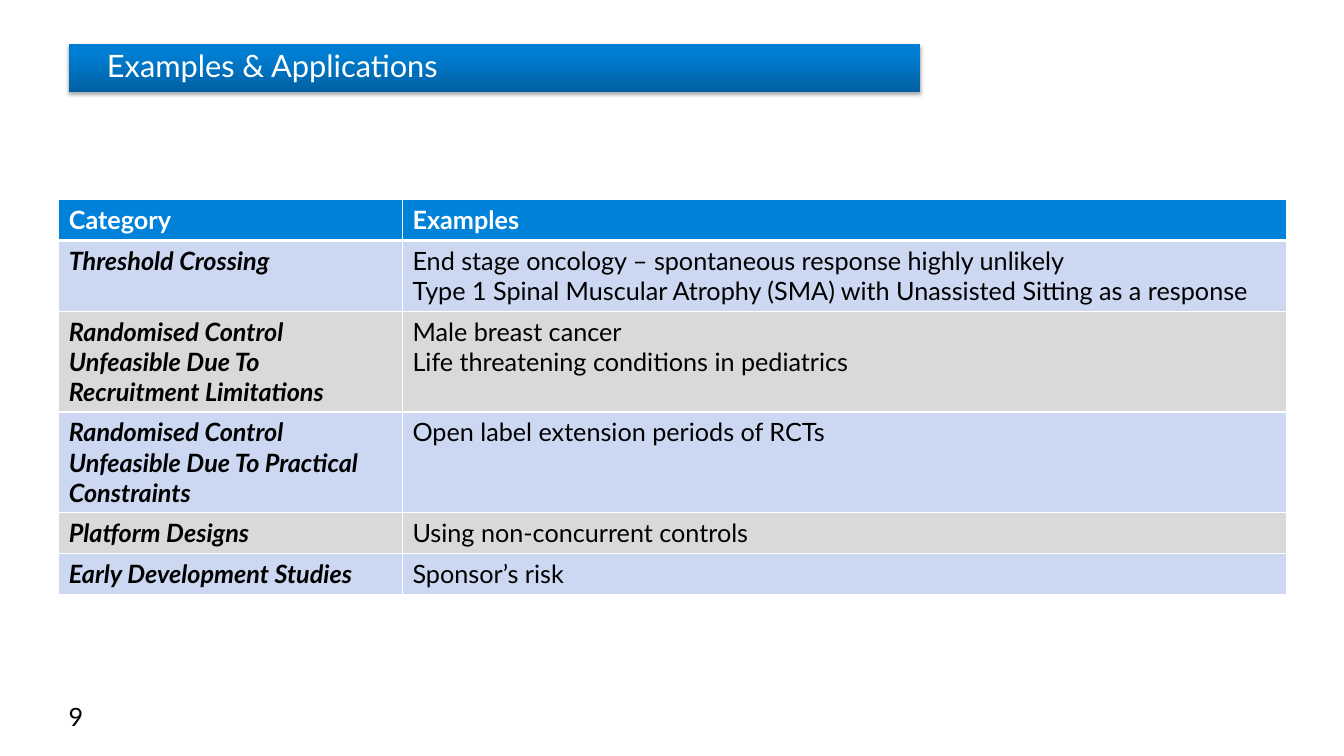
import pptx
import pptx.util
import pptx.dml.color
import pptx.enum.shapes
import pptx.enum.text
import pptx.oxml
import pptx.oxml.ns

Pt = pptx.util.Pt
NAMESPACE = pptx.oxml.ns.nsdecls("a")
LINE_HEIGHT, CELL_PADDING, MIN_ROW = 21.6, 7.2, 29.2
BANDS = ["CCD8F1", "D9D9D9"]
GRADIENT = [(0, "0061A3"), (80, "007ED3"), (100, "007FD4")]
HEADER = ("Category", ["Examples"], 1)
ROWS = [
    ("Threshold Crossing",
     ["End stage oncology – spontaneous response highly unlikely",
      "Type 1 Spinal Muscular Atrophy (SMA) with Unassisted Sitting as a response"], 2),
    ("Randomised Control Unfeasible Due To Recruitment Limitations",
     ["Male breast cancer", "Life threatening conditions in pediatrics"], 3),
    ("Randomised Control Unfeasible Due To Practical Constraints",
     ["Open label extension periods of RCTs"], 3),
    ("Platform Designs", ["Using non-concurrent controls"], 1),
    ("Early Development Studies", ["Sponsor’s risk"], 1),
]


def color(value):
    """Turn a hex string into a colour."""
    return pptx.dml.color.RGBColor.from_string(value)


def set_attributes(target, formats):
    """Set each attribute of the target from a dict."""
    for name, value in formats.items():
        setattr(target, name, value)


def write(frame, lines, fill, size=18, **formats):
    """Fill a text frame with one paragraph per line."""
    frame.text = "\n".join(lines)
    for para in frame.paragraphs:
        for span in para.runs:
            set_attributes(span.font, {"name": "Lato", "size": Pt(size), **formats})
            span.font.color.rgb = color(fill)


def add_banner(page, text, left, top, width, height):
    """Place the gradient bar with the title over it."""
    bar = page.shapes.add_shape(pptx.enum.shapes.MSO_SHAPE.RECTANGLE,
                                Pt(left), Pt(top), Pt(width), Pt(height))
    bar.line.fill.background()
    bar.shadow.inherit = False
    properties = bar.element.spPr
    stops = "".join(f'<a:gs pos="{place * 1000}"><a:srgbClr val="{value}"/></a:gs>'
                    for place, value in GRADIENT)
    properties.find(pptx.oxml.ns.qn("a:ln")).addprevious(pptx.oxml.parse_xml(
        f'<a:gradFill {NAMESPACE} rotWithShape="1"><a:gsLst>{stops}</a:gsLst>'
        '<a:lin ang="16200000" scaled="0"/></a:gradFill>'))
    properties.find(pptx.oxml.ns.qn("a:effectLst")).append(pptx.oxml.parse_xml(
        f'<a:outerShdw {NAMESPACE} blurRad="{Pt(3.1)}" dist="{Pt(1.8)}" dir="5400000" '
        'rotWithShape="0"><a:srgbClr val="000000"><a:alpha val="35000"/></a:srgbClr>'
        '</a:outerShdw>'))

    title = page.shapes.title
    bar.element.addnext(title.element)
    set_attributes(title, {"left": Pt(left), "top": Pt(top),
                           "width": Pt(width), "height": Pt(height)})
    frame = title.text_frame
    set_attributes(frame, {
        "margin_left": Pt(27.4), "margin_right": Pt(4.3),
        "margin_top": Pt(4.3), "margin_bottom": Pt(4.3), "word_wrap": True,
        "auto_size": pptx.enum.text.MSO_AUTO_SIZE.NONE,
        "vertical_anchor": pptx.enum.text.MSO_ANCHOR.MIDDLE})
    write(frame, [text], "FFFFFF", size=22)
    set_attributes(frame.paragraphs[0], {"alignment": pptx.enum.text.PP_ALIGN.LEFT,
                                         "line_spacing": 0.9})


def set_borders(cell, **weights):
    """Draw white borders of the given weights around a cell."""
    properties = cell._tc.get_or_add_tcPr()
    for side in "LRTB":
        properties.append(pptx.oxml.parse_xml(
            f'<a:ln{side} {NAMESPACE} w="{Pt(weights.get(side, 1))}"><a:solidFill>'
            f'<a:srgbClr val="FFFFFF"/></a:solidFill></a:ln{side}>'))


def add_examples(page, left, top, width, category_width):
    """Place the table of categories and their examples."""
    heights = [max(MIN_ROW, count * LINE_HEIGHT + CELL_PADDING)
               for _, _, count in [HEADER, *ROWS]]
    table = page.shapes.add_table(len(heights), 2, Pt(left), Pt(top),
                                  Pt(width), Pt(sum(heights))).table
    table.columns[0].width = Pt(category_width)
    table.columns[1].width = Pt(width - category_width)
    for index, (category, examples, _) in enumerate([HEADER, *ROWS]):
        table.rows[index].height = Pt(heights[index])
        is_header = index == 0
        weights = {0: {"B": 3}, 1: {"T": 3}}.get(index, {})
        for column, lines in enumerate([[category], examples]):
            cell = table.cell(index, column)
            set_borders(cell, **weights)
            cell.fill.solid()
            cell.fill.fore_color.rgb = color("0082DA" if is_header else BANDS[(index - 1) % 2])
            write(cell.text_frame, lines, "FFFFFF" if is_header else "000000",
                  bold=is_header or column == 0, italic=not is_header and column == 0)


def add_page_number(page, number, left, top, width, height):
    """Place the page number at the foot."""
    box = page.shapes.add_textbox(Pt(left), Pt(top), Pt(width), Pt(height))
    box.text_frame.word_wrap = True
    write(box.text_frame, [str(number)], "000000")


def main():
    """Build the deck and save it."""
    deck = pptx.Presentation()
    set_attributes(deck, {"slide_width": Pt(960), "slide_height": Pt(540)})
    page = deck.slides.add_slide(deck.slide_layouts[5])
    add_examples(page, 42, 142.6, 877, 245.5)
    add_page_number(page, 9, 42, 497.5, 877, 15)
    add_banner(page, "Examples & Applications", 49, 31.7, 608.4, 33.8)
    deck.save("out.pptx")


if __name__ == "__main__":
    main()
